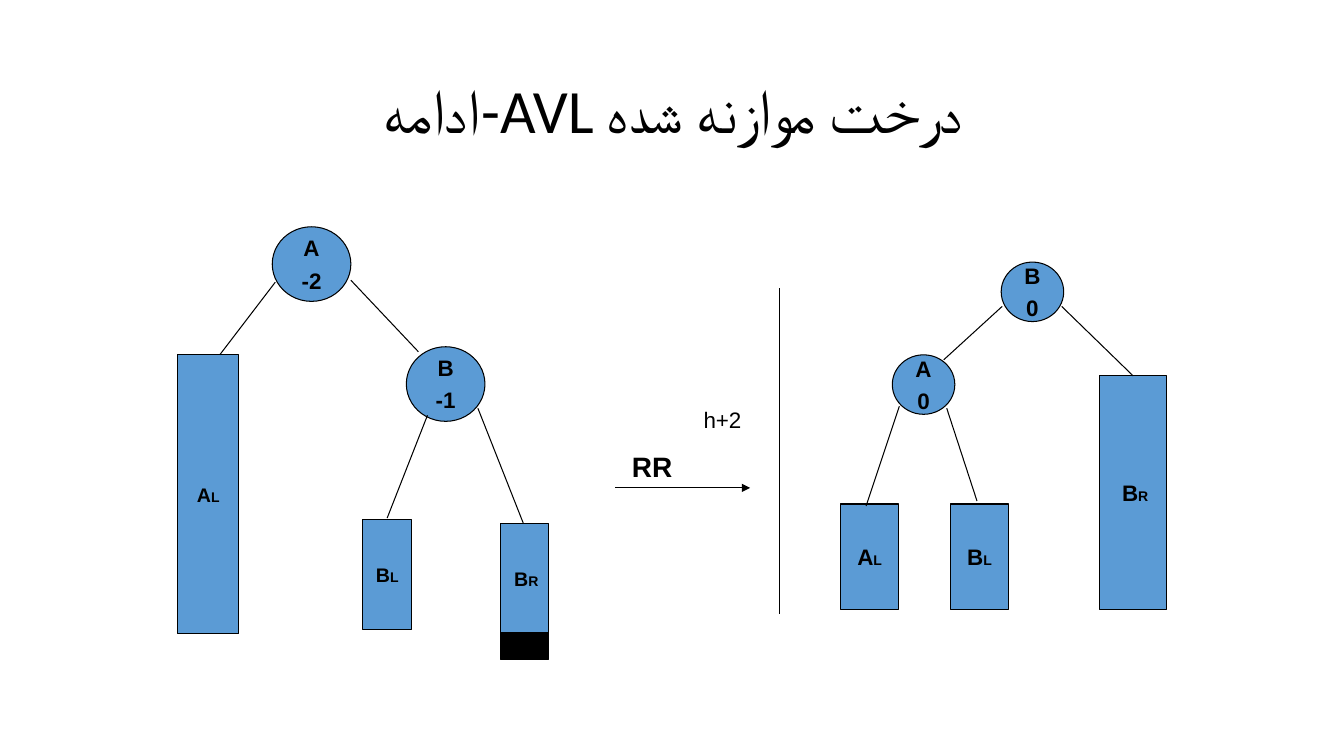
from lxml import etree
from pptx import Presentation
from pptx.dml.color import RGBColor
from pptx.enum import shapes, text
from pptx.oxml import ns
from pptx.util import Inches, Pt

BLACK = RGBColor(0x00, 0x00, 0x00)
BLUE = RGBColor(0x5B, 0x9B, 0xD5)
LINE_WIDTH = Pt(0.75)


def add_run(paragraph, words, size, bold=True, name="Arial"):
    run = paragraph.add_run()
    run.text = words
    run.font.size = Pt(size)
    run.font.bold = bold
    run.font.name = name
    run.font.color.rgb = BLACK
    return run


def add_box(slide, preset, left, top, width, height, paragraphs=(), fill=BLUE):
    shape = slide.shapes.add_shape(
        preset, Inches(left), Inches(top), Inches(width), Inches(height))
    shape.shadow.inherit = False
    shape.fill.solid()
    shape.fill.fore_color.rgb = fill
    shape.line.color.rgb = BLACK
    shape.line.width = LINE_WIDTH
    frame = shape.text_frame
    frame.word_wrap = False
    frame.vertical_anchor = text.MSO_ANCHOR.MIDDLE
    for index, runs in enumerate(paragraphs):
        paragraph = frame.add_paragraph() if index else frame.paragraphs[0]
        paragraph.alignment = text.PP_ALIGN.CENTER
        paragraph.space_before = Pt(3.7)
        for words, size in runs:
            add_run(paragraph, words, size)


def add_node(slide, left, top, width, height, name, balance):
    add_box(slide, shapes.MSO_SHAPE.OVAL, left, top, width, height,
            [[(name, 16)], [(balance, 16)]])


def add_subtree(slide, left, top, width, height, name, side, size):
    runs = [(name, size), (side, 10)]
    if side == "R":
        runs.insert(0, (" ", 10))
    add_box(slide, shapes.MSO_SHAPE.RECTANGLE, left, top, width, height, [runs])


def add_line(slide, x1, y1, x2, y2, arrow=False):
    connector = slide.shapes.add_connector(
        shapes.MSO_CONNECTOR.STRAIGHT,
        Inches(x1), Inches(y1), Inches(x2), Inches(y2))
    connector.line.color.rgb = BLACK
    connector.line.width = LINE_WIDTH
    if arrow:
        outline = connector.line._get_or_add_ln()
        etree.SubElement(outline, ns.qn("a:tailEnd"), type="triangle")
    etree.SubElement(connector._element.spPr, ns.qn("a:effectLst"))


def add_label(slide, left, top, width, height, words, size, bold, anchor, space):
    box = slide.shapes.add_textbox(
        Inches(left), Inches(top), Inches(width), Inches(height))
    frame = box.text_frame
    frame.word_wrap = False
    frame.auto_size = text.MSO_AUTO_SIZE.SHAPE_TO_FIT_TEXT
    frame.vertical_anchor = anchor
    paragraph = frame.paragraphs[0]
    paragraph.space_before = Pt(space)
    add_run(paragraph, words, size, bold)


def set_title(slide, words):
    title = slide.shapes.title
    title.left, title.top = Inches(0.92), Inches(0.4)
    title.width, title.height = Inches(11.5), Inches(1.45)
    title.text_frame.vertical_anchor = text.MSO_ANCHOR.MIDDLE
    paragraph = title.text_frame.paragraphs[0]
    paragraph.alignment = text.PP_ALIGN.CENTER
    paragraph.line_spacing = 0.9
    paragraph._p.get_or_add_pPr().set("rtl", "1")
    run = add_run(paragraph, words, 44, False, "Calibri")
    etree.SubElement(run.font._element, ns.qn("a:cs"), typeface="Calibri")


def add_unbalanced_tree(slide):
    add_node(slide, 2.7, 2.25, 0.78, 0.74, "A", "-2")
    add_node(slide, 4.03, 3.44, 0.78, 0.74, "B", "-1")
    add_subtree(slide, 1.76, 3.52, 0.61, 2.77, "A", "L", 14)
    add_subtree(slide, 3.6, 5.15, 0.48, 1.1, "B", "L", 14)
    add_subtree(slide, 4.96, 5.19, 0.48, 1.1, "B", "R", 14)
    add_box(slide, shapes.MSO_SHAPE.RECTANGLE, 4.96, 6.28, 0.48, 0.26, fill=BLACK)
    for branch in [(2.73, 2.8, 2.18, 3.52), (3.48, 2.78, 4.15, 3.49),
                   (4.24, 4.12, 3.84, 5.14), (4.74, 4.05, 5.19, 5.19)]:
        add_line(slide, *branch)


def add_balanced_tree(slide):
    add_node(slide, 9.93, 2.6, 0.62, 0.59, "B", "0")
    add_node(slide, 8.85, 3.52, 0.62, 0.59, "A", "0")
    add_subtree(slide, 8.34, 5, 0.57, 1.05, "A", "L", 16)
    add_subtree(slide, 9.43, 5, 0.57, 1.05, "B", "L", 16)
    add_subtree(slide, 10.91, 3.73, 0.66, 2.32, "B", "R", 16)
    for branch in [(9.94, 3.04, 9.36, 3.57), (10.53, 3.04, 11.24, 3.73),
                   (8.92, 4.03, 8.59, 5.02), (9.39, 4.05, 9.69, 4.97)]:
        add_line(slide, *branch)


def add_rotation(slide):
    add_line(slide, 6.1, 4.84, 7.44, 4.84, arrow=True)
    add_label(slide, 6.17, 4.41, 0.7, 0.48, "RR", 20, True,
              text.MSO_ANCHOR.TOP, 4.6)
    add_line(slide, 7.73, 2.86, 7.73, 6.09)
    add_label(slide, 6.88, 3.96, 0.67, 0.41, "h+2", 16, False,
              text.MSO_ANCHOR.MIDDLE, 0)


def main():
    presentation = Presentation()
    presentation.slide_width = Inches(13.33)
    presentation.slide_height = Inches(7.5)
    slide = presentation.slides.add_slide(presentation.slide_layouts[5])
    set_title(slide, "درخت موازنه شده AVL-ادامه")
    add_rotation(slide)
    add_balanced_tree(slide)
    add_unbalanced_tree(slide)
    presentation.save("out.pptx")


if __name__ == "__main__":
    main()
